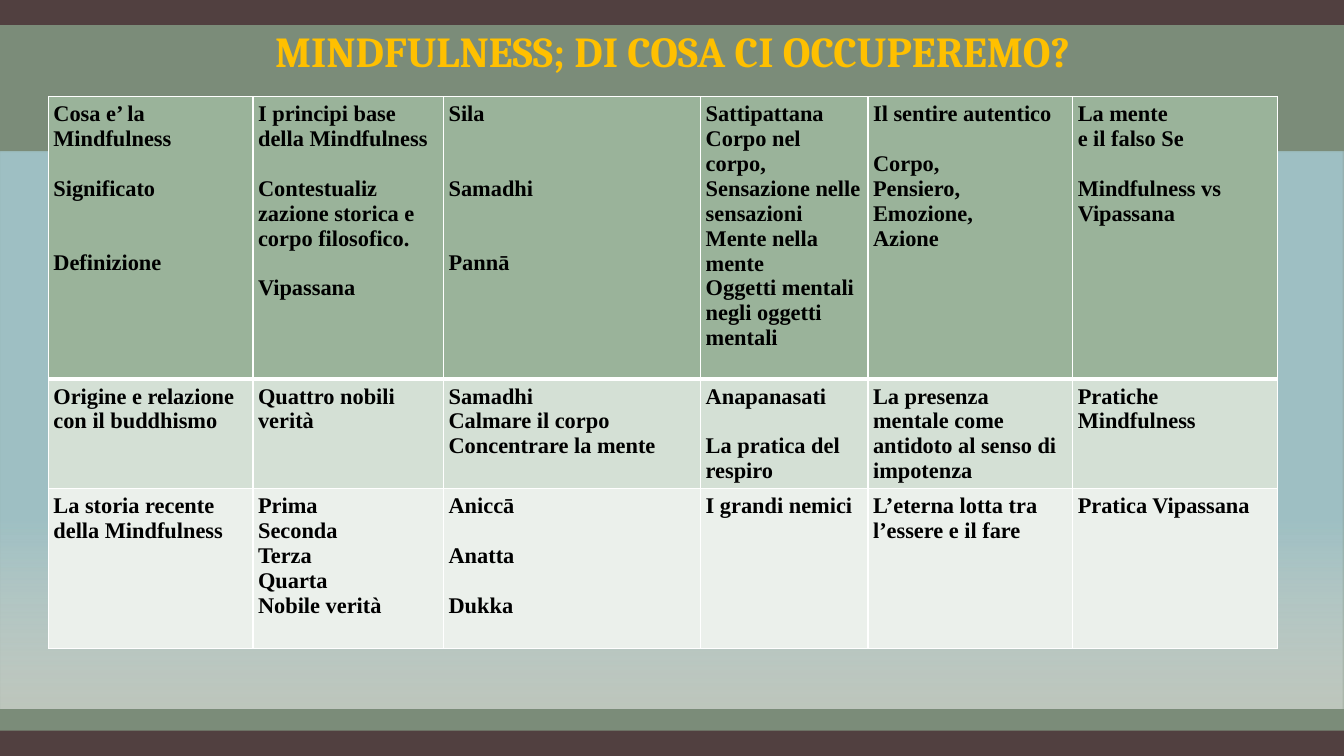
from lxml import etree
from pptx import Presentation
from pptx.dml.color import RGBColor
from pptx.enum import shapes, text
from pptx.oxml import ns
from pptx.util import Inches, Pt

BROWN = RGBColor(0x51, 0x40, 0x40)
OLIVE = RGBColor(0x80, 0x95, 0x80)
SKY = RGBColor(0xA8, 0xCD, 0xD7)
WHITE = RGBColor(0xFF, 0xFF, 0xFF)
BLACK = RGBColor(0, 0, 0)
GOLD = RGBColor(0xFF, 0xC0, 0x00)
SHADES = [RGBColor(0x9A, 0xB3, 0x9A), RGBColor(0xD4, 0xE0, 0xD5),
          RGBColor(0xEB, 0xF0, 0xEB)]

WIDTHS = [2.03, 1.89, 2.55, 1.66, 2.03, 2.03]
HEIGHTS = [2.8, 1.09, 1.58]
LINE = 17.7  # points in one line of 16 pt text
PAD = Inches(0.05)

# An empty line stands for one line of space before the next paragraph
TOPICS = [
    ["Cosa e’ la Mindfulness\n\nSignificato\n\n\nDefinizione",
     "I principi base della Mindfulness\n\n"
     "Contestualiz zazione storica e corpo filosofico.\n\nVipassana",
     "Sila\n\n\nSamadhi\n\n\nPannā",
     "Sattipattana\nCorpo nel corpo,\nSensazione nelle sensazioni\n"
     "Mente nella mente\nOggetti mentali negli oggetti mentali",
     "Il sentire autentico\n\nCorpo,\nPensiero,\nEmozione,\nAzione",
     "La mente\ne il falso Se\n\nMindfulness vs\nVipassana"],
    ["Origine e relazione con il buddhismo",
     "Quattro nobili verità",
     "Samadhi\nCalmare il corpo\nConcentrare la mente",
     "Anapanasati\n\nLa pratica del respiro",
     "La presenza mentale come antidoto al senso di impotenza",
     "Pratiche Mindfulness"],
    ["La storia recente della Mindfulness",
     "Prima\nSeconda\nTerza\nQuarta\nNobile verità",
     "Aniccā\n\nAnatta\n\nDukka",
     "I grandi nemici",
     "L’eterna lotta tra l’essere e il fare",
     "Pratica Vipassana"],
]


def write(frame, words, size=16, font="Times New Roman", color=BLACK,
          align=text.PP_ALIGN.LEFT):
    """Fill a text frame, turning empty lines into paragraph spacing."""
    frame.word_wrap = True
    gap = 0
    for i, line in enumerate(words.split("\n")):
        if not line:
            gap += LINE
            continue
        para = frame.add_paragraph() if i else frame.paragraphs[0]
        para.alignment = align
        para.space_before = Pt(gap)
        gap = 0
        run = para.add_run()
        run.text = line
        run.font.size, run.font.name, run.font.bold = Pt(size), font, True
        run.font.color.rgb = color


def add(parent, tag, **attrs):
    node = etree.SubElement(parent, ns.qn(tag))
    for key, value in attrs.items():
        node.set(key, str(value))
    return node


def tint(parent, color, alpha):
    node = add(parent, "a:srgbClr", val=color)
    add(node, "a:alpha", val=alpha * 1000)


def band(slide, top, height, color):
    box = slide.shapes.add_shape(shapes.MSO_SHAPE.RECTANGLE, 0, Inches(top),
                                 Inches(13.33), Inches(height))
    box.shadow.inherit = False
    box.line.fill.background()
    box.fill.solid()
    box.fill.fore_color.rgb = color
    return box.fill._xPr.find(ns.qn("a:solidFill"))


def backdrop(slide):
    band(slide, 0, 7.5, BROWN)

    # Translucent olive panel
    fill = band(slide, 0.25, 7, OLIVE)
    add(fill[0], "a:alpha", val=90000)

    # Sky that fades out towards the bottom
    fill = band(slide, 1.5, 5.53, SKY)
    grad = etree.Element(ns.qn("a:gradFill"), rotWithShape="1")
    stops = add(grad, "a:gsLst")
    for place, color, alpha in [(66, SKY, 79), (100, WHITE, 50)]:
        tint(add(stops, "a:gs", pos=place * 1000), color, alpha)
    add(grad, "a:lin", ang=90 * 60000, scaled=0)
    fill.getparent().replace(fill, grad)


def heading(slide, left, top, width, height):
    box = slide.shapes.add_textbox(Inches(left), Inches(top),
                                   Inches(width), Inches(height))
    frame = box.text_frame
    frame.margin_left = frame.margin_right = PAD
    frame.margin_top = frame.margin_bottom = PAD
    frame.vertical_anchor = text.MSO_ANCHOR.BOTTOM
    write(frame, "MINDFULNESS; DI COSA CI OCCUPEREMO?", size=30.5,
          font="Cambria", color=GOLD, align=text.PP_ALIGN.CENTER)


def border(cell, row):
    props = cell._tc.get_or_add_tcPr()
    for side in "LRTB":
        thick = (side, row) in [("B", 0), ("T", 1)]
        line = add(props, "a:ln" + side, w=Pt(3 if thick else 1))
        add(add(line, "a:solidFill"), "a:srgbClr", val=WHITE)


def grid(slide, left, top):
    table = slide.shapes.add_table(
        len(HEIGHTS), len(WIDTHS), Inches(left), Inches(top),
        Inches(sum(WIDTHS)), Inches(sum(HEIGHTS))).table
    table.first_row = table.horz_banding = False
    for col, width in zip(table.columns, WIDTHS):
        col.width = Inches(width)
    for r, height in enumerate(HEIGHTS):
        table.rows[r].height = Inches(height)
        for c, words in enumerate(TOPICS[r]):
            cell = table.cell(r, c)
            cell.margin_left = cell.margin_right = PAD
            cell.margin_top = cell.margin_bottom = PAD
            border(cell, r)
            cell.fill.solid()
            cell.fill.fore_color.rgb = SHADES[r]
            write(cell.text_frame, words)


def main():
    deck = Presentation()
    deck.slide_width, deck.slide_height = Inches(13.33), Inches(7.5)
    slide = deck.slides.add_slide(deck.slide_layouts[6])
    backdrop(slide)
    grid(slide, 0.48, 0.96)
    heading(slide, 1.67, -0.02, 10, 0.82)
    deck.save("out.pptx")


if __name__ == "__main__":
    main()
